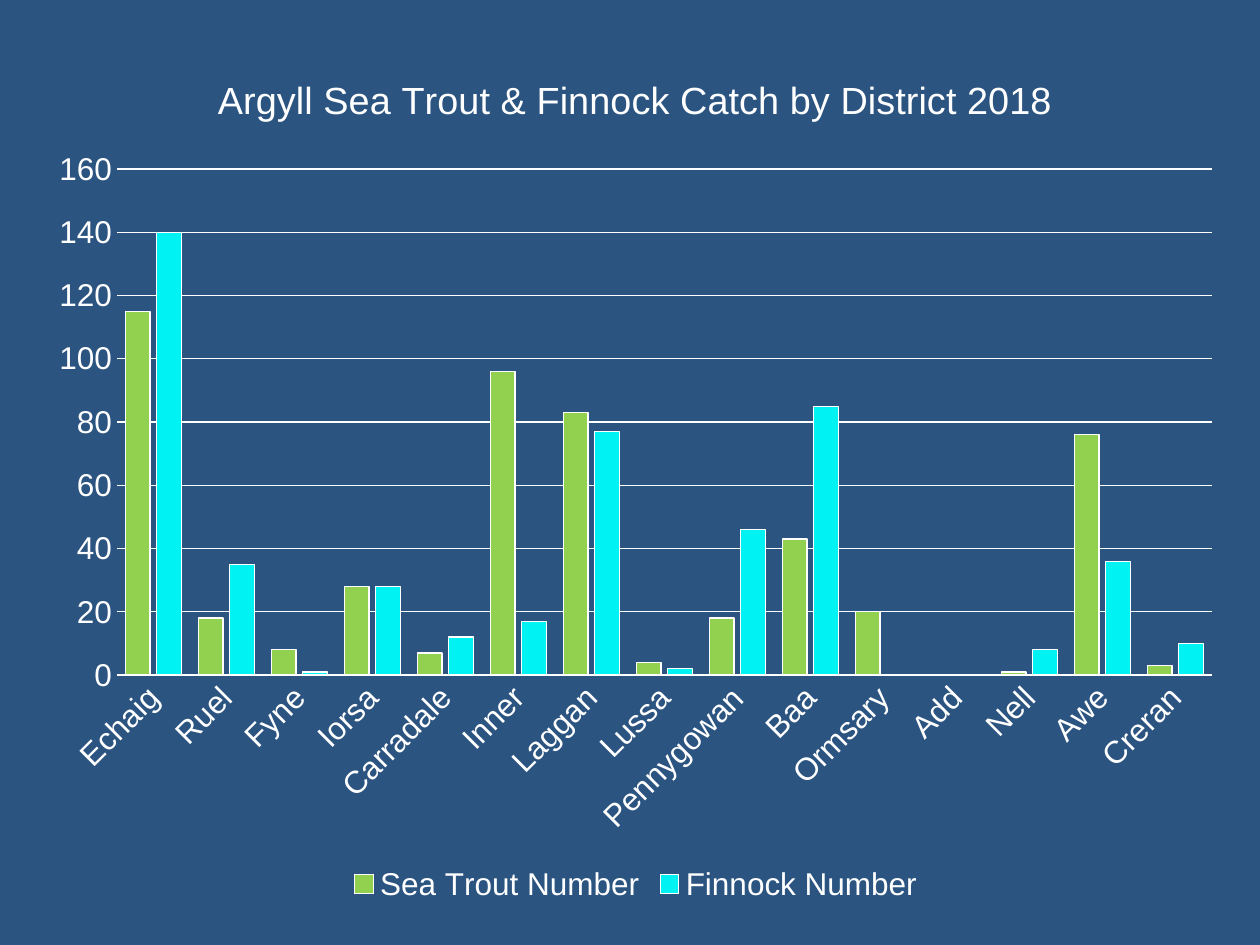
"""Build a slide charting the Argyll sea trout and finnock catch by district."""
from pptx import Presentation
from pptx.chart.data import CategoryChartData
from pptx.dml.color import RGBColor
from pptx.enum.chart import XL_CHART_TYPE, XL_LEGEND_POSITION, XL_TICK_MARK
from pptx.util import Inches, Pt

COLUMNS = XL_CHART_TYPE.COLUMN_CLUSTERED
BOTTOM = XL_LEGEND_POSITION.BOTTOM
NO_TICK = XL_TICK_MARK.NONE

TITLE = "Argyll Sea Trout & Finnock Catch by District 2018"
CATCH = [
    ("Echaig", 115, 140), ("Ruel", 18, 35), ("Fyne", 8, 1),
    ("Iorsa", 28, 28), ("Carradale", 7, 12), ("Inner", 96, 17),
    ("Laggan", 83, 77), ("Lussa", 4, 2), ("Pennygowan", 18, 46),
    ("Baa", 43, 85), ("Ormsary", 20, 0), ("Add", 0, 0),
    ("Nell", 1, 8), ("Awe", 76, 36), ("Creran", 3, 10),
]
SERIES = [("Sea Trout Number", "92D050"), ("Finnock Number", "00F2F2")]
BACKGROUND, WHITE = "2B5481", "FFFFFF"
CHART_BOX = (0.28, 0.36, 9.53, 6.85)
LABEL_SIZE, TITLE_SIZE = 18, 21.6
LABEL_ANGLE = -45


def paint(fill, color):
    fill.solid()
    fill.fore_color.rgb = RGBColor.from_string(color)


def draw_line(line):
    line.width = Pt(0.75)
    paint(line.fill, WHITE)


def style_font(font, size=LABEL_SIZE):
    for name, value in {"name": "Arial", "size": Pt(size), "bold": False}.items():
        setattr(font, name, value)
    paint(font.fill, WHITE)


def add_catch_chart(slide):
    districts, *counts = zip(*CATCH)
    data = CategoryChartData()
    data.categories = districts
    for (name, _), values in zip(SERIES, counts):
        data.add_series(name, values)
    chart = slide.shapes.add_chart(COLUMNS, *map(Inches, CHART_BOX), data).chart
    style_font(chart.font)
    return chart


def style_title(chart):
    paragraph = chart.chart_title.text_frame.paragraphs[0]
    run = paragraph.add_run()
    run.text = TITLE
    style_font(run.font, TITLE_SIZE)
    chart.chart_title.include_in_layout = False


def style_legend(chart):
    chart.has_legend = True
    chart.legend.position = BOTTOM
    chart.legend.include_in_layout = False
    style_font(chart.legend.font)


def style_axes(chart):
    category_axis, value_axis = chart.category_axis, chart.value_axis
    for axis in (category_axis, value_axis):
        axis.major_tick_mark = axis.minor_tick_mark = NO_TICK
        style_font(axis.tick_labels.font)
    draw_line(category_axis.format.line)
    body = category_axis._element.txPr.bodyPr
    body.set("rot", str(LABEL_ANGLE * 60000))
    body.set("vert", "horz")
    value_axis.format.line.fill.background()
    value_axis.has_major_gridlines = True
    draw_line(value_axis.major_gridlines.format.line)
    for name, value in {"minimum_scale": 0, "maximum_scale": 160, "major_unit": 20}.items():
        setattr(value_axis, name, value)


def style_columns(chart):
    plot = chart.plots[0]
    for name, value in {"gap_width": 69, "overlap": -27, "vary_by_categories": False}.items():
        setattr(plot, name, value)
    for series, (_, color) in zip(plot.series, SERIES):
        series.invert_if_negative = False
        paint(series.format.fill, color)
        draw_line(series.format.line)


def main():
    presentation = Presentation()
    presentation.slide_width, presentation.slide_height = Inches(10), Inches(7.5)
    slide = presentation.slides.add_slide(presentation.slide_layouts[6])
    paint(slide.background.fill, BACKGROUND)
    chart = add_catch_chart(slide)
    for style in (style_title, style_legend, style_axes, style_columns):
        style(chart)
    presentation.save("out.pptx")


if __name__ == "__main__":
    main()
